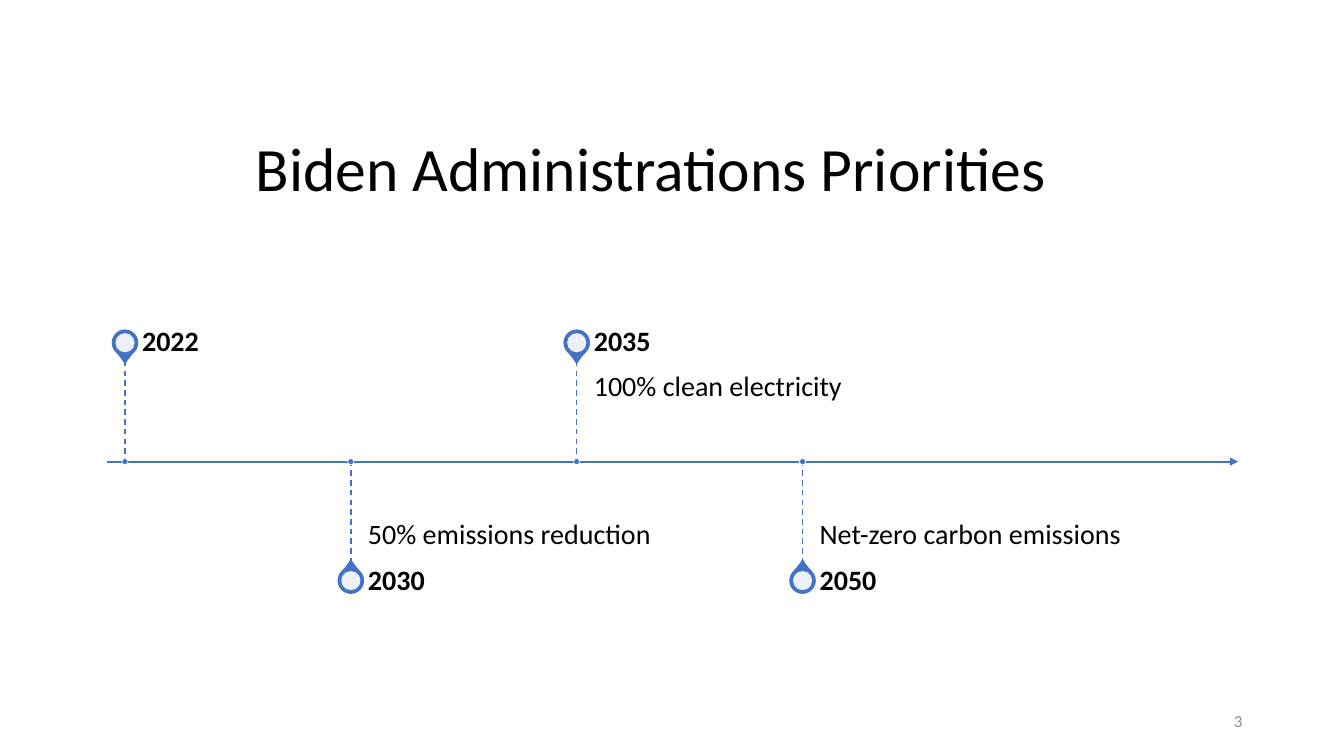
"""Build a timeline slide of the administration's climate priorities."""
from lxml import etree
from pptx import Presentation
from pptx import util as u
from pptx.dml import color
from pptx.enum import dml, shapes, text
from pptx.oxml import ns

COLORS = {"ink": "000000", "accent": "4472C4", "paper": "FFFFFF", "muted": "8C8C8C"}
RGB = {name: color.RGBColor.from_string(value) for name, value in COLORS.items()}

prs = Presentation()
prs.slide_width, prs.slide_height = u.Inches(13.33), u.Inches(7.5)
slide = prs.slides.add_slide(prs.slide_layouts[6])


def add_label(words, box, size, anchor, insets, ink="ink", bold=False, align="LEFT", spacing=0.9):
    frame = slide.shapes.add_textbox(*map(u.Inches, box)).text_frame
    margins = zip(("margin_left", "margin_top", "margin_right", "margin_bottom"), map(u.Inches, insets))
    frame_format = {"word_wrap": True, "vertical_anchor": text.MSO_ANCHOR[anchor], **dict(margins)}
    paragraph = frame.paragraphs[0]
    paragraph_format = {"alignment": text.PP_ALIGN[align], "line_spacing": spacing}
    run = paragraph.add_run()
    run.text = words
    run.font.color.rgb = RGB[ink]
    font_format = {"name": "Calibri", "size": u.Pt(size), "bold": bold}
    for part, values in ((frame, frame_format), (paragraph, paragraph_format), (run.font, font_format)):
        for key, value in values.items():
            setattr(part, key, value)


def add_line(start, end, width):
    line = slide.shapes.add_connector(shapes.MSO_CONNECTOR.STRAIGHT, *map(u.Inches, (*start, *end)))
    line.line.color.rgb = RGB["accent"]
    line.line.width = u.Pt(width)
    etree.SubElement(line._element.spPr, ns.qn("a:effectLst"))
    return line


add_label("Biden Administrations Priorities", (2.44, 1.05, 8.45, 1.3), 44, "MIDDLE", (0.1, 0.05, 0.1, 0.05))

AXIS = 4.58
axis = add_line((1.06, AXIS), (12.28, AXIS), 1.5)
etree.SubElement(axis.line._get_or_add_ln(), ns.qn("a:tailEnd"), type="triangle")

SIDES = {
    "above": {"turn": 135, "pin": 3.4, "year": 3.22, "stem": 3.58, "detail": 3.58,
              "anchor": "TOP", "insets": (0, 0.14, 0.14, 0.21)},
    "below": {"turn": 315, "pin": 5.76, "year": 5.59, "stem": 5.59, "detail": AXIS,
              "anchor": "BOTTOM", "insets": (0, 0.21, 0, 0.14)},
}
milestones = [
    ("2022", "", "above"),
    ("2030", "50% emissions reduction", "below"),
    ("2035", "100% clean electricity", "above"),
    ("2050", "Net-zero carbon emissions", "below"),
]

for index, (year, detail, side_name) in enumerate(milestones):
    side = SIDES[side_name]
    center = 1.24 + 2.24 * index
    label_left = center + 0.17
    add_line((center, side["stem"]), (center, AXIS), 1).line.dash_style = dml.MSO_LINE.DASH

    markers = [
        ("TEAR", 0.25, side["pin"], "accent", "accent", 1),
        ("OVAL", 0.19, side["pin"], "paper", None, 0),
        ("OVAL", 0.06, AXIS, "accent", "paper", 0.5),
    ]
    for kind, size, middle, fill, outline, width in markers:
        marker = slide.shapes.add_shape(
            shapes.MSO_SHAPE[kind], u.Inches(center - size / 2), u.Inches(middle - size / 2),
            u.Inches(size), u.Inches(size))
        marker.shadow.inherit = False
        marker.fill.solid()
        marker.fill.fore_color.rgb = RGB[fill]
        if outline:
            marker.line.color.rgb = RGB[outline]
            marker.line.width = u.Pt(width)
        else:
            marker.line.fill.background()
            tint = marker._element.spPr.find(ns.qn("a:solidFill"))[0]
            etree.SubElement(tint, ns.qn("a:alpha"), val="90000")
        if kind == "TEAR":
            marker.rotation = side["turn"]
            marker.adjustments[0] = 1.15

    if detail:
        add_label(detail, (label_left, side["detail"], 3.73, 1), 20, side["anchor"], side["insets"])
    add_label(year, (label_left, side["year"], 3.73, 0.35), 20, "MIDDLE", (0, 0, 0.14, 0), bold=True)

add_label("3", (9.42, 6.95, 3, 0.4), 12, "MIDDLE", (0.1, 0.05, 0.1, 0.05), "muted", align="RIGHT", spacing=1.0)

prs.save("out.pptx")
